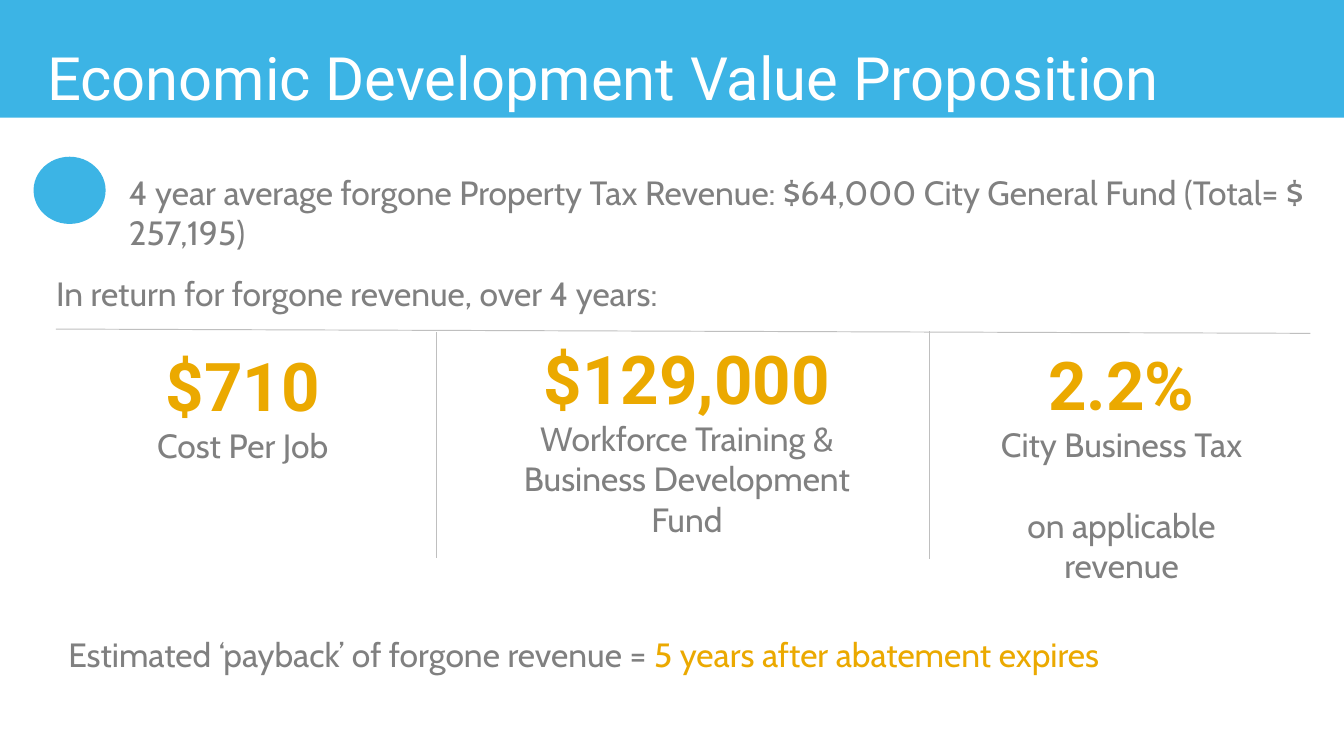
"""Build the Economic Development Value Proposition slide."""
from lxml.etree import SubElement
from pptx import Presentation
from pptx.dml.color import RGBColor
from pptx.enum.shapes import MSO_CONNECTOR, MSO_SHAPE
from pptx.enum.text import MSO_ANCHOR, PP_ALIGN
from pptx.oxml.ns import qn
from pptx.util import Pt

COLORS = {"blue": "3CB4E5", "white": "FFFFFF", "gray": "808080",
          "gold": "EBA900", "rule": "BFBFBF"}
FORMATS = {
    "title": ({"name": "Roboto", "size": Pt(32), "bold": False}, "white"),
    "figure": ({"name": "Roboto", "size": Pt(36), "bold": True}, "gold"),
    "body": ({"name": "Cabin", "size": Pt(18), "bold": False}, "gray"),
    "accent": ({"name": "Cabin", "size": Pt(18), "bold": False}, "gold"),
}


def place(shape, left, top, width, height):
    """Move and size a shape, with lengths in points."""
    box = {"left": left, "top": top, "width": width, "height": height}
    for name, value in box.items():
        setattr(shape, name, Pt(value))


def write(shape, paragraphs, alignment=PP_ALIGN.LEFT):
    """Fill a shape with paragraphs, each a gap before and its styled runs."""
    frame = shape.text_frame
    frame.word_wrap = True
    frame.vertical_anchor = MSO_ANCHOR.TOP
    for index, (gap, runs) in enumerate(paragraphs):
        paragraph = frame.add_paragraph() if index else frame.paragraphs[0]
        paragraph.alignment = alignment
        paragraph.space_before = Pt(gap)
        paragraph.line_spacing = 1.0
        for text, style in runs:
            run = paragraph.add_run()
            run.text = text
            values, color = FORMATS[style]
            for name, value in values.items():
                setattr(run.font, name, value)
            run.font.color.rgb = RGBColor.from_string(COLORS[color])


presentation = Presentation()
presentation.slide_width, presentation.slide_height = Pt(720), Pt(405)
slide = presentation.slides.add_slide(presentation.slide_layouts[5])
shapes = slide.shapes

title = shapes.title
for kind, box in [(MSO_SHAPE.RECTANGLE, (0, 0, 720, 63)),
                  (MSO_SHAPE.OVAL, (18, 84, 38.6, 36))]:
    shape = shapes.add_shape(kind, *map(Pt, box))
    shape.shadow.inherit = False
    shape.fill.solid()
    shape.fill.fore_color.rgb = RGBColor.from_string(COLORS["blue"])
    shape.line.fill.background()
    title._element.addprevious(shape._element)

place(title, 18, 18, 684, 46)
write(title, [(0, [("Economic Development Value Proposition", "title")])])

statements = [
    ((62, 88.5, 651.6, 36),
     [("4 year average forgone Property Tax Revenue: $64,000 City General Fund "
       "(Total= $ 257,195)", "body")]),
    ((23, 142.6, 684, 27.4),
     [("In return for forgone revenue, over 4 years:", "body")]),
    ((29.5, 336.2, 695.5, 28.8),
     [("Estimated ‘payback’ of forgone revenue = ", "body"),
      ("5 years after abatement expires", "accent")]),
]
for box, runs in statements:
    write(shapes.add_textbox(*map(Pt, box)), [(0, runs)])

benefits = [
    ((59, 180.7, 142, 116.6), "$710", [(0, "Cost Per Job")]),
    ((268, 177.1, 200, 116.6), "$129,000",
     [(0, "Workforce Training & Business Development Fund")]),
    ((527.8, 180.3, 146, 116.6), "2.2%",
     [(0, "City Business Tax"), (21.6, "on applicable revenue")]),
]
for box, figure, captions in benefits:
    paragraphs = [(0, [(figure, "figure")])]
    paragraphs += [(gap, [(text, "body")]) for gap, text in captions]
    write(shapes.add_textbox(*map(Pt, box)), paragraphs, PP_ALIGN.CENTER)

for ends in [(30, 176.3, 702, 178.6), (234, 178, 234, 299), (498, 177.5, 498, 299.5)]:
    rule = shapes.add_connector(MSO_CONNECTOR.STRAIGHT, *map(Pt, ends))
    rule.line.width = Pt(0.5)
    rule.line.color.rgb = RGBColor.from_string(COLORS["rule"])
    SubElement(rule._element.spPr, qn("a:effectLst"))

presentation.save("out.pptx")
